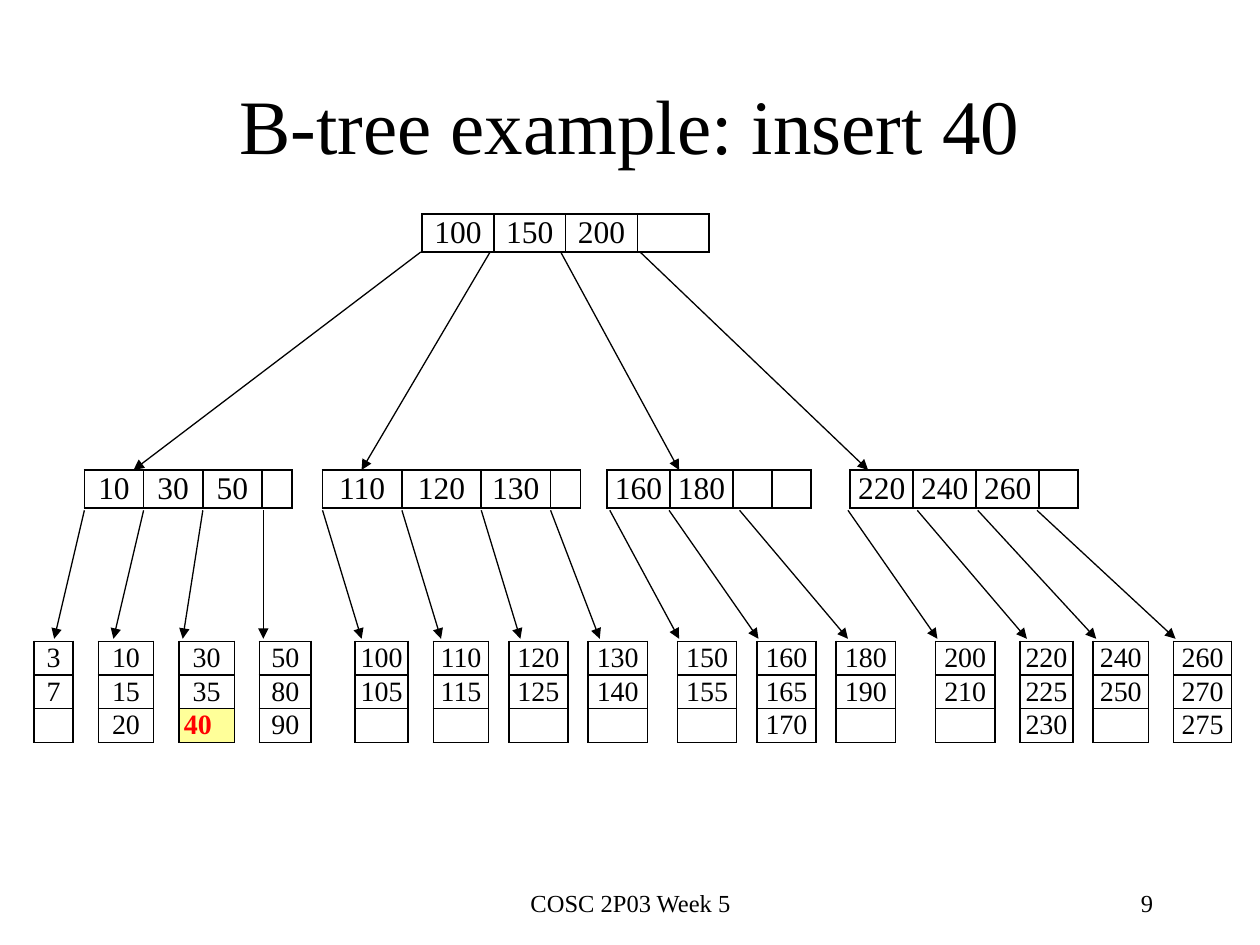
from dataclasses import dataclass
from typing import NamedTuple

from lxml.etree import SubElement
from pptx import Presentation
from pptx.dml.color import RGBColor
from pptx.enum.shapes import MSO_CONNECTOR
from pptx.enum.text import MSO_ANCHOR, MSO_AUTO_SIZE, PP_ALIGN
from pptx.oxml import parse_xml
from pptx.oxml.ns import nsdecls, qn
from pptx.util import Inches, Pt

COLUMNS, ROWS = 1000, 750
SLIDE_WIDTH, SLIDE_HEIGHT = Inches(10), Inches(7.5)
FONT = "Times New Roman"
COLORS = {"ink": "000000", "inserted": "FF0000", "highlight": "FFFF99"}
INSERTED_KEY = "40"
CELL_FORMAT = {"margin_top": 0, "margin_bottom": 0, "vertical_anchor": MSO_ANCHOR.MIDDLE}
TABLE_FORMAT = {"first_row": False, "horz_banding": False}


class Node(NamedTuple):
    widths: tuple[int, ...]
    keys: tuple[str, ...]
    gap: int = 0


@dataclass(frozen=True)
class Level:
    left: int
    top: int
    row_height: int
    size: int
    inset: int
    nodes: tuple[Node, ...]
    stacked: bool = False


@dataclass(frozen=True)
class Fan:
    top: int
    bottom: int
    ends: tuple[tuple[int, int], ...]


LEVELS = (
    Level(335, 170, 30, 18, 0, (Node((57,) * 4, ("100", "150", "200", "")),)),
    Level(67, 373, 30, 18, 0, (
        Node((47, 47, 47, 24), ("10", "30", "50", ""), 24),
        Node((63, 63, 55, 24), ("110", "120", "130", ""), 21),
        Node((50, 50, 31, 31), ("160", "180", "", ""), 31),
        Node((50, 50, 50, 31), ("220", "240", "260", "")),
    )),
    Level(27, 509, 25, 16, 4, (
        Node((31,), ("3", "7", ""), 20),
        Node((44,), ("10", "15", "20"), 20),
        Node((44,), ("30", "35", INSERTED_KEY), 20),
        Node((41,), ("50", "80", "90"), 35),
        Node((42,), ("100", "105", ""), 20),
        Node((44,), ("110", "115", ""), 16),
        Node((47,), ("120", "125", ""), 16),
        Node((47,), ("130", "140", ""), 24),
        Node((47,), ("150", "155", ""), 16),
        Node((47,), ("160", "165", "170"), 16),
        Node((47,), ("180", "190", ""), 32),
        Node((47,), ("200", "210", ""), 20),
        Node((42,), ("220", "225", "230"), 16),
        Node((44,), ("240", "250", ""), 20),
        Node((46,), ("260", "270", "275")),
    ), stacked=True),
)
FANS = (
    Fan(200, 373, ((334, 106), (389, 287), (445, 539), (508, 689))),
    Fan(405, 507, (
        (67, 43), (114, 90), (161, 145), (209, 209),
        (256, 287), (319, 350), (382, 413), (437, 476),
        (484, 539), (531, 602), (587, 673),
        (673, 744), (728, 815), (776, 870), (823, 933),
    )),
)


def across(columns: int) -> int:
    return round(SLIDE_WIDTH * columns / COLUMNS)


def down(rows: int) -> int:
    return round(SLIDE_HEIGHT * rows / ROWS)


def write(paragraph, words: str, size: int, align, color: str = "ink", bold: bool = False) -> None:
    paragraph.alignment = align
    run = paragraph.add_run()
    run.text = words
    for name, value in {"name": FONT, "size": Pt(size), "bold": bold}.items():
        setattr(run.font, name, value)
    run.font.color.rgb = RGBColor.from_string(COLORS[color])


def place(shape, left: int, top: int, width: int, height: int) -> None:
    box = {"left": across(left), "top": down(top), "width": across(width), "height": down(height)}
    for name, value in box.items():
        setattr(shape, name, value)


def draw_arrow(slide, start: tuple[int, int], end: tuple[int, int]) -> None:
    arrow = slide.shapes.add_connector(
        MSO_CONNECTOR.STRAIGHT, across(start[0]), down(start[1]), across(end[0]), down(end[1]))
    arrow.line.width = Pt(0.75)
    arrow.line.color.rgb = RGBColor.from_string(COLORS["ink"])
    SubElement(arrow.line._get_or_add_ln(), qn("a:tailEnd"), type="triangle")
    SubElement(arrow._element.spPr, qn("a:effectLst"))


def set_borders(cell, outlined: bool) -> None:
    for position, side in enumerate("LRTB"):
        drawn = outlined or side in "LR"
        paint = f'<a:solidFill><a:srgbClr val="{COLORS["ink"]}"/></a:solidFill>' if drawn else "<a:noFill/>"
        border = parse_xml(f'<a:ln{side} {nsdecls("a")} w="{Pt(1)}">{paint}</a:ln{side}>')
        cell._tc.get_or_add_tcPr().insert(position, border)


def fill_cell(cell, key: str, level: Level, is_gap: bool) -> None:
    inset = across(level.inset)
    for name, value in {**CELL_FORMAT, "margin_left": inset, "margin_right": inset}.items():
        setattr(cell, name, value)
    cell.fill.background()
    paragraph = cell.text_frame.paragraphs[0]
    if key == INSERTED_KEY:
        cell.fill.solid()
        cell.fill.fore_color.rgb = RGBColor.from_string(COLORS["highlight"])
        write(paragraph, key, level.size, PP_ALIGN.LEFT, "inserted", True)
    elif key:
        write(paragraph, key, level.size, PP_ALIGN.CENTER)
    else:
        SubElement(paragraph._p, qn("a:endParaRPr"), sz=str(level.size * 100))
    set_borders(cell, not is_gap)


def draw_level(slide, level: Level) -> None:
    row_count = len(level.nodes[0].keys) if level.stacked else 1
    columns = []
    for node in level.nodes:
        stacks = [node.keys] if level.stacked else [(key,) for key in node.keys]
        columns += [(width, stack, False) for width, stack in zip(node.widths, stacks)]
        if node.gap:
            columns.append((node.gap, ("",) * row_count, True))
    tree_row = slide.shapes.add_table(
        row_count, len(columns), across(level.left), down(level.top),
        across(sum(width for width, _, _ in columns)), down(level.row_height * row_count)).table
    for name, value in TABLE_FORMAT.items():
        setattr(tree_row, name, value)
    for row in tree_row.rows:
        row.height = down(level.row_height)
    for column, (width, stack, is_gap) in enumerate(columns):
        tree_row.columns[column].width = across(width)
        for row, key in enumerate(stack):
            fill_cell(tree_row.cell(row, column), key, level, is_gap)


def draw_footer(slide, words: str, left: int, width: int, align) -> None:
    footer = slide.shapes.add_textbox(across(left), down(700), across(width), down(50))
    footer.text_frame.word_wrap = True
    write(footer.text_frame.paragraphs[0], words, 14, align)


def main() -> None:
    deck = Presentation()
    deck.slide_width, deck.slide_height = SLIDE_WIDTH, SLIDE_HEIGHT
    slide = deck.slides.add_slide(deck.slide_layouts[5])
    heading = slide.shapes.title
    place(heading, 75, 36, 850, 125)
    heading.text_frame.auto_size = MSO_AUTO_SIZE.NONE
    heading.text_frame.vertical_anchor = MSO_ANCHOR.MIDDLE
    write(heading.text_frame.paragraphs[0], "B-tree example: insert 40", 44, PP_ALIGN.CENTER)
    draw_footer(slide, "COSC 2P03 Week 5", 342, 317, PP_ALIGN.CENTER)
    draw_footer(slide, "9", 717, 208, PP_ALIGN.RIGHT)
    for fan in FANS:
        for start, end in fan.ends:
            draw_arrow(slide, (start, fan.top), (end, fan.bottom))
    for level in LEVELS:
        draw_level(slide, level)
    deck.save("out.pptx")


if __name__ == "__main__":
    main()
